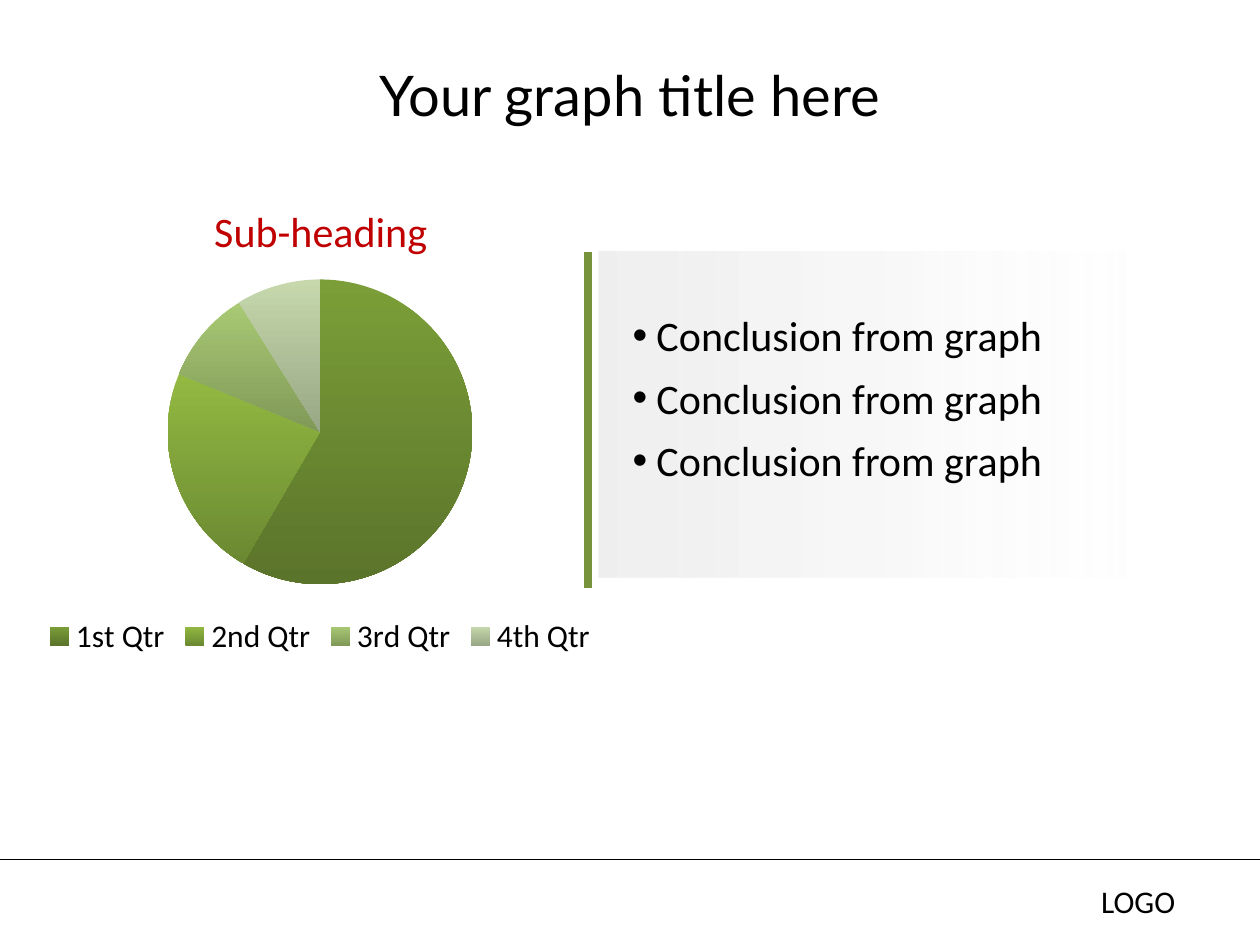
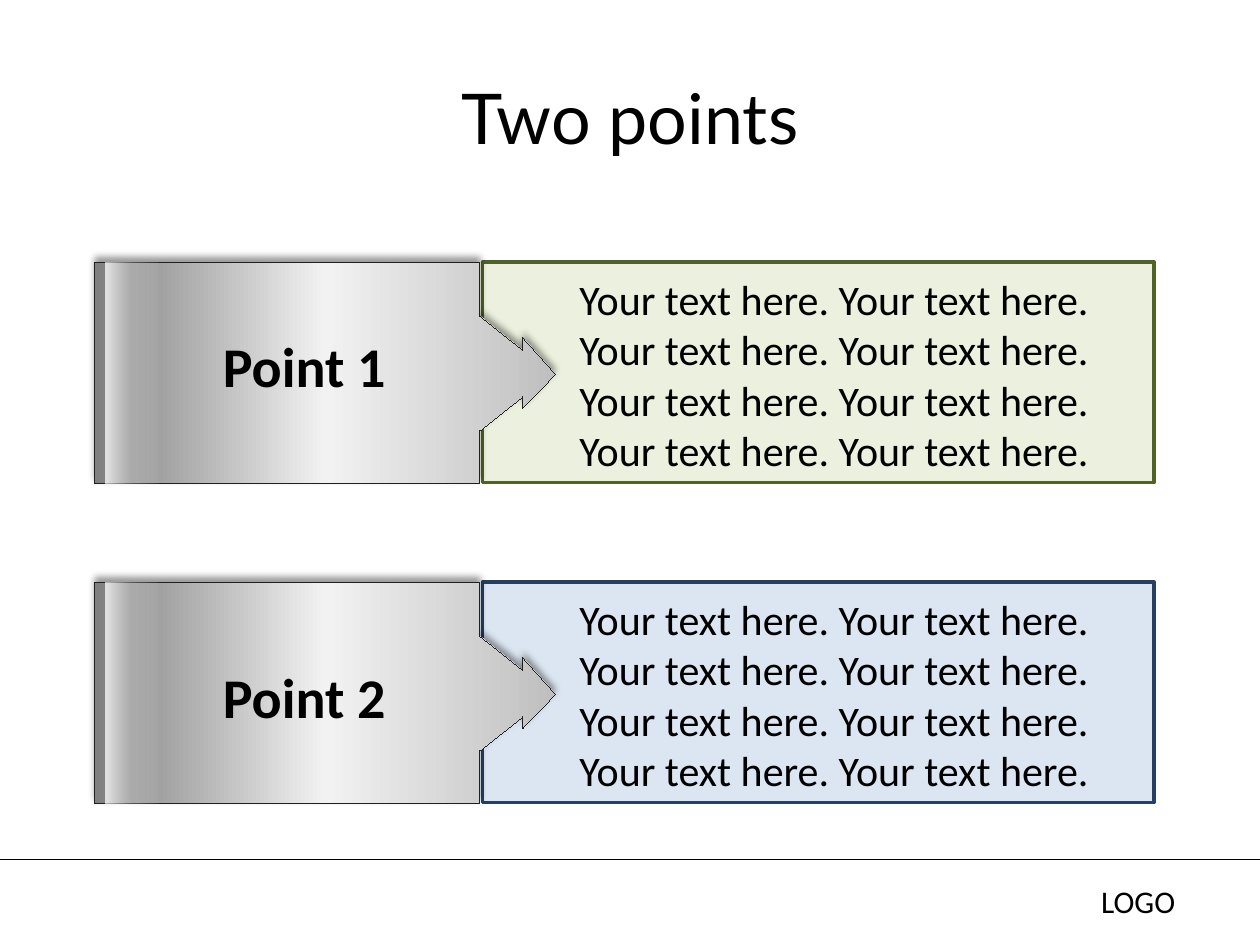
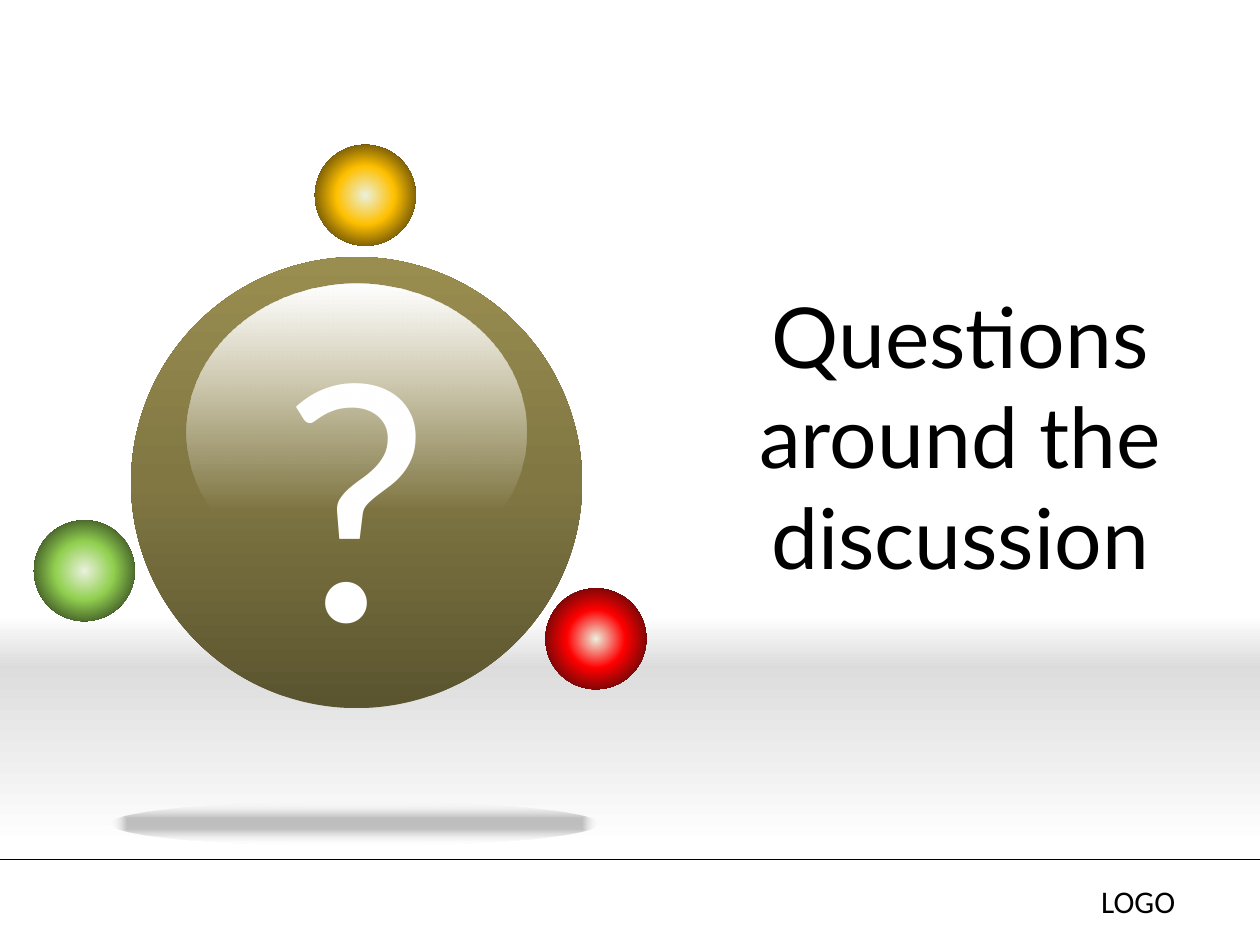
from pptx import Presentation
from pptx.chart.data import CategoryChartData
from pptx.dml.color import RGBColor
from pptx.enum.chart import XL_CHART_TYPE, XL_LEGEND_POSITION
from pptx.enum.shapes import MSO_CONNECTOR, MSO_SHAPE
from pptx.enum.text import MSO_ANCHOR, MSO_AUTO_SIZE, PP_ALIGN
from pptx.oxml import parse_xml
from pptx.oxml.ns import nsdecls, qn
from pptx.util import Inches, Pt

PIE = XL_CHART_TYPE.PIE
LEGEND_BOTTOM = XL_LEGEND_POSITION.BOTTOM
STRAIGHT = MSO_CONNECTOR.STRAIGHT
RECTANGLE, OVAL = MSO_SHAPE.RECTANGLE, MSO_SHAPE.OVAL
TOP, MIDDLE = MSO_ANCHOR.TOP, MSO_ANCHOR.MIDDLE
LEFT, CENTER = PP_ALIGN.LEFT, PP_ALIGN.CENTER
NO_AUTOFIT = MSO_AUTO_SIZE.NONE
CONTENT_LAYOUT, TITLE_LAYOUT = 1, 5

TITLE_FONT, BODY_FONT = "Lato", "Calibri"

BLACK = RGBColor(0x00, 0x00, 0x00)
NEAR_BLACK = RGBColor(0x0D, 0x0D, 0x0D)
WHITE = RGBColor(0xFF, 0xFF, 0xFF)
PALE_GREY = RGBColor(0xF2, 0xF2, 0xF2)
LIGHT_GREY = RGBColor(0xD9, 0xD9, 0xD9)
FLOOR_GREY = RGBColor(0xDD, 0xDD, 0xDD)
HORIZON_GREY = RGBColor(0xDB, 0xDB, 0xDB)
SILVER = RGBColor(0xBF, 0xBF, 0xBF)
STEEL = RGBColor(0x80, 0x80, 0x80)
OUTLINE = RGBColor(0x23, 0x1F, 0x20)
DARK_RED = RGBColor(0xC0, 0x00, 0x00)
RULE_GREEN = RGBColor(0x77, 0x93, 0x3C)
PALE_GREEN = RGBColor(0xEB, 0xF1, 0xDE)
DEEP_GREEN = RGBColor(0x4F, 0x62, 0x28)
PALE_BLUE = RGBColor(0xDC, 0xE6, 0xF2)
DEEP_BLUE = RGBColor(0x25, 0x40, 0x61)
AMBER = RGBColor(0xFF, 0xC0, 0x00)
RED = RGBColor(0xFF, 0x00, 0x00)
LIME = RGBColor(0x92, 0xD0, 0x50)
OLIVE_DARK = RGBColor(0x5A, 0x54, 0x2F)
OLIVE = RGBColor(0x81, 0x77, 0x43)
OLIVE_LIGHT = RGBColor(0x99, 0x8D, 0x4F)

# Top and bottom colour of each pie slice
SLICE_COLORS = [
    (RGBColor(0x7B, 0x9E, 0x38), RGBColor(0x5B, 0x74, 0x2B)),
    (RGBColor(0x93, 0xB9, 0x42), RGBColor(0x6B, 0x89, 0x32)),
    (RGBColor(0xA9, 0xC9, 0x74), RGBColor(0x80, 0x99, 0x58)),
    (RGBColor(0xC6, 0xD8, 0xAC), RGBColor(0x98, 0xA7, 0x85)),
]


def apply_format(target, values):
    for name, value in values.items():
        setattr(target, name, value)


def place(shape, left, top, width, height):
    apply_format(shape, {"left": Inches(left), "top": Inches(top),
                         "width": Inches(width), "height": Inches(height)})


def write_text(text_frame, lines, size, color=BLACK, font=BODY_FONT, bold=False,
               align=LEFT, anchor=TOP):
    apply_format(text_frame, {"word_wrap": True, "auto_size": NO_AUTOFIT,
                              "vertical_anchor": anchor})
    for index, line in enumerate(lines):
        paragraph = text_frame.add_paragraph() if index else text_frame.paragraphs[0]
        paragraph.alignment = align
        run = paragraph.add_run()
        run.text = line
        apply_format(run.font, {"name": font, "size": Pt(size), "bold": bold})
        run.font.color.rgb = color


def add_text(slide, box, lines, size, **text_format):
    text_box = slide.shapes.add_textbox(*map(Inches, box))
    write_text(text_box.text_frame, lines, size, **text_format)
    return text_box


def set_title(slide, text, box, size):
    title = slide.shapes.title
    place(title, *box)
    write_text(title.text_frame, [text], size, font=TITLE_FONT, align=CENTER,
               anchor=MIDDLE)


def add_bullets(slide, box, lines, size):
    body = slide.placeholders[1]
    place(body, *box)
    write_text(body.text_frame, lines, size)
    indent = Inches(0.19)
    for paragraph in body.text_frame.paragraphs:
        apply_format(paragraph, {"space_before": Pt(0), "space_after": Pt(6.8)})
        properties = paragraph._p.get_or_add_pPr()
        properties.set("marL", str(indent))
        properties.set("indent", str(-indent))


def add_line(slide, start, end, color, width):
    line = slide.shapes.add_connector(STRAIGHT, *map(Inches, (*start, *end)))
    line.line.color.rgb = color
    line.line.width = Pt(width)
    line.element.spPr.append(parse_xml(f"<a:effectLst {nsdecls('a')}/>"))
    return line


def fill_gradient(shape, stops, angle=0, path=None):
    """Fill with (position %, colour, opacity %) stops, linear or from the centre."""
    stop_xml = "".join(
        f'<a:gs pos="{position * 1000}"><a:srgbClr val="{color}">'
        f'<a:alpha val="{opacity * 1000}"/></a:srgbClr></a:gs>'
        for position, color, opacity in stops)
    if path:
        direction = (f'<a:path path="{path}"><a:fillToRect l="50000" t="50000" '
                     'r="50000" b="50000"/></a:path>')
    else:
        direction = f'<a:lin ang="{angle * 60000}" scaled="0"/>'
    gradient = parse_xml(f'<a:gradFill {nsdecls("a")} rotWithShape="1">'
                         f'<a:gsLst>{stop_xml}</a:gsLst>{direction}</a:gradFill>')
    shape.fill.solid()
    properties = shape.element.spPr
    properties.replace(properties.find(qn("a:solidFill")), gradient)


def add_plain_shape(slide, kind, box):
    shape = slide.shapes.add_shape(kind, *map(Inches, box))
    shape.shadow.inherit = False
    shape.line.fill.background()
    return shape


def add_gradient_shape(slide, kind, box, stops, angle=0, path=None):
    shape = add_plain_shape(slide, kind, box)
    fill_gradient(shape, stops, angle, path)
    return shape


def send_to_back(slide, shape):
    # The first two children of the shape tree are its own properties
    slide.shapes.element.insert(2, shape.element)


def add_panel(slide, box, fill_color, line_color):
    panel = add_plain_shape(slide, RECTANGLE, box)
    panel.fill.solid()
    panel.fill.fore_color.rgb = fill_color
    panel.line.color.rgb = line_color
    panel.line.width = Pt(2)


def add_metal_arrow(slide, left, top):
    offsets = [(3.66, 0.89), (3.4, 0.6), (3.4, 0.7), (3.06, 0.43), (3.06, 0), (0, 0),
               (0, 1.76), (3.06, 1.76), (3.06, 1.34), (3.4, 1.07), (3.4, 1.16)]
    points = [(Inches(left + x), Inches(top + y)) for x, y in offsets]
    builder = slide.shapes.build_freeform(*points[0])
    builder.add_line_segments(points[1:], close=True)
    arrow = builder.convert_to_shape()
    fill_gradient(arrow, [(0, STEEL, 100), (50, PALE_GREY, 100), (100, SILVER, 100)])
    arrow.line.color.rgb = OUTLINE
    arrow.shadow.inherit = False
    properties = arrow.element.spPr
    # A zero width must be written out, or the theme's line width applies
    properties.find(qn("a:ln")).set("w", "0")
    properties.find(qn("a:effectLst")).append(parse_xml(
        f'<a:outerShdw {nsdecls("a")} blurRad="{Pt(4)}" dist="{Pt(3)}" '
        f'dir="{270 * 60000}" rotWithShape="0"><a:srgbClr val="{BLACK}">'
        '<a:alpha val="40000"/></a:srgbClr></a:outerShdw>'))


def add_point(slide, top, label, label_top, fill_color, line_color):
    add_panel(slide, (3.83, top, 5.33, 1.75), fill_color, line_color)
    add_metal_arrow(slide, 0.75, top)
    sentences = " ".join(["Your text here."] * 4)
    add_text(slide, (4.5, top + 0.04, 4.33, 1.72), [sentences] * 2, 24)
    add_text(slide, (0.83, label_top, 3.17, 0.64), [label], 32, bold=True, align=CENTER)
    gloss = add_gradient_shape(
        slide, RECTANGLE, (0.17, top + 0.67, 1.75, 0.42),
        [(0, WHITE, 81), (50, LIGHT_GREY, 35), (100, PALE_GREY, 5)], angle=90)
    gloss.rotation = 270


def add_pie(slide, box, categories, values):
    data = CategoryChartData()
    data.categories = categories
    data.add_series("Series 1", values)
    chart = slide.shapes.add_chart(PIE, *map(Inches, box), data).chart
    apply_format(chart, {"has_title": False, "has_legend": True})
    apply_format(chart.font, {"name": BODY_FONT, "size": Pt(18)})
    chart.font.color.rgb = BLACK
    apply_format(chart.legend, {"position": LEGEND_BOTTOM, "include_in_layout": False})
    plot = chart.plots[0]
    plot.vary_by_categories = True
    for index, colors in enumerate(SLICE_COLORS):
        fill = plot.series[0].points[index].format.fill
        fill.gradient()
        fill.gradient_angle = 270
        for stop, color in zip(fill.gradient_stops, colors):
            stop.color.rgb = color


def add_ball(slide, left, top, color):
    add_gradient_shape(slide, OVAL, (left, top, 0.8, 0.8),
                       [(0, PALE_GREEN, 100), (41, color, 100), (100, NEAR_BLACK, 100)],
                       path="circle")


def move_footer_to_master(presentation, slide):
    """Draw the footer on a slide and hand it to the master that all slides share."""
    footer = [add_line(slide, (0, 6.82), (10, 6.82), BLACK, 0.75),
              add_text(slide, (8.64, 6.95, 1.11, 0.4), ["LOGO"], 18)]
    for shape in footer:
        presentation.slide_master.shapes.element.append(shape.element)


def build_graph_slide(slide):
    backdrop = add_gradient_shape(
        slide, RECTANGLE, (4.75, 2, 4.83, 2.58),
        [(0, LIGHT_GREY, 42), (50, PALE_GREY, 44), (100, WHITE, 0)])
    send_to_back(slide, backdrop)
    set_title(slide, "Your graph title here", (0.5, 0.25, 9, 1), 32)
    add_text(slide, (0.67, 1.58, 3.75, 0.5), ["Sub-heading"], 24, color=DARK_RED,
             align=CENTER, anchor=MIDDLE)
    add_pie(slide, (0, 2.08, 5.08, 3.17),
            ["1st Qtr", "2nd Qtr", "3rd Qtr", "4th Qtr"], [59, 23, 10, 9])
    add_bullets(slide, (4.92, 2.41, 3.67, 1.5), ["Conclusion from graph"] * 3, 24)
    add_line(slide, (4.67, 2), (4.67, 4.67), RULE_GREEN, 4.5)


def build_points_slide(slide):
    set_title(slide, "Two points", (0.5, 0.3, 9, 1.25), 40)
    add_point(slide, 2.08, "Point 1", 2.58, PALE_GREEN, DEEP_GREEN)
    add_point(slide, 4.62, "Point 2", 5.21, PALE_BLUE, DEEP_BLUE)


def build_questions_slide(slide):
    add_gradient_shape(slide, RECTANGLE, (0, 5.3, 10, 1.42),
                       [(0, FLOOR_GREY, 100), (100, WHITE, 100)], angle=90)
    add_gradient_shape(slide, RECTANGLE, (0, 4.88, 10, 0.43),
                       [(0, WHITE, 100), (100, HORIZON_GREY, 100)], angle=90)
    set_title(slide, "Questions around the discussion", (5.58, 2.83, 4.08, 1.25), 48)
    for left, top, color in [(2.5, 1.15, AMBER), (4.33, 4.67, RED), (0.27, 4.13, LIME)]:
        add_ball(slide, left, top, color)
    globe = add_gradient_shape(
        slide, OVAL, (1.04, 2.04, 3.58, 3.58),
        [(0, OLIVE_DARK, 100), (50, OLIVE, 100), (100, OLIVE_LIGHT, 100)], angle=270)
    write_text(globe.text_frame, ["?"], 199, color=WHITE, align=CENTER, anchor=MIDDLE)
    add_gradient_shape(slide, OVAL, (0.88, 6.36, 3.87, 0.35),
                       [(24, BLACK, 24), (100, WHITE, 0)], path="shape")
    add_gradient_shape(slide, OVAL, (1.48, 2.25, 2.7, 2.36),
                       [(0, WHITE, 100), (76, WHITE, 0)], angle=90)


def main():
    presentation = Presentation()
    presentation.slide_width = Inches(10)
    presentation.slide_height = Inches(7.5)
    pages = [(CONTENT_LAYOUT, build_graph_slide), (TITLE_LAYOUT, build_points_slide),
             (TITLE_LAYOUT, build_questions_slide)]
    for layout, build in pages:
        build(presentation.slides.add_slide(presentation.slide_layouts[layout]))
    move_footer_to_master(presentation, presentation.slides[0])
    presentation.save("out.pptx")


if __name__ == "__main__":
    main()
